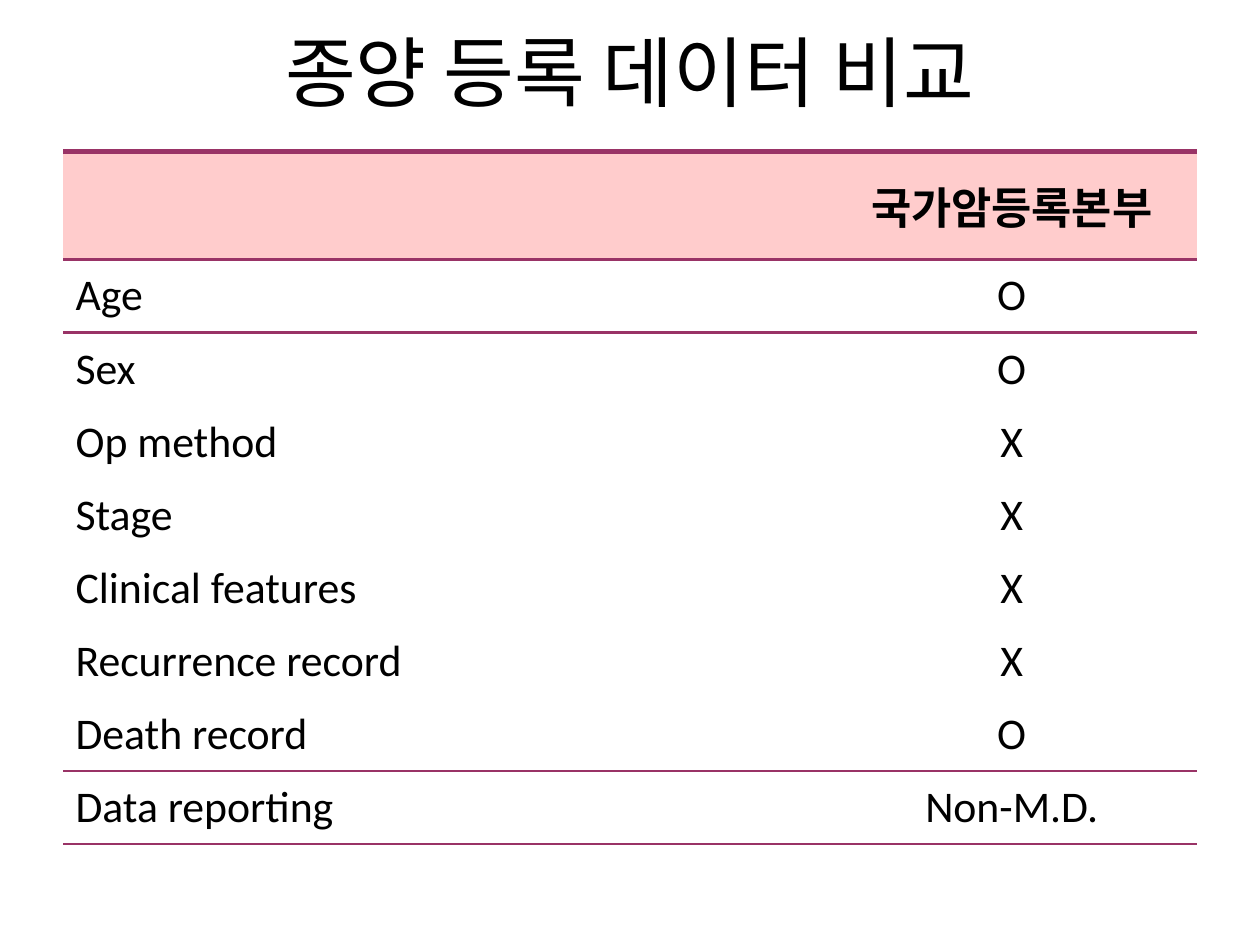
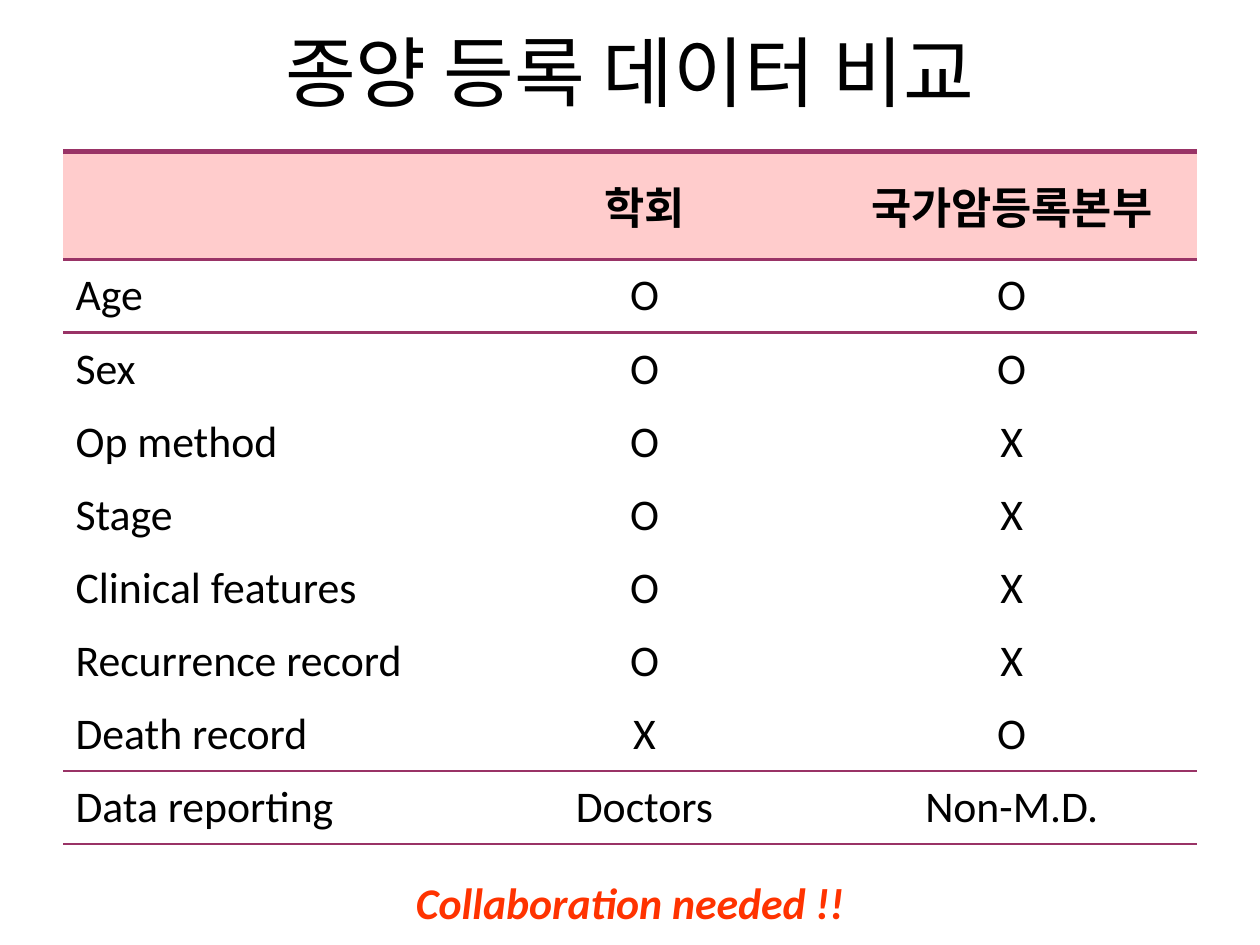
from typing import NamedTuple

from lxml import etree
from pptx import Presentation
from pptx import util as u
from pptx.dml.color import RGBColor
from pptx.enum import text as t
from pptx.oxml import ns

PX = 9144  # 100 px to the inch
FONT = "Calibri"
BLACK = RGBColor(0x00, 0x00, 0x00)
PINK = RGBColor(0xFF, 0xCC, 0xCC)
PLUM = RGBColor(0x99, 0x33, 0x66)
RED = RGBColor(0xFF, 0x33, 0x00)

TITLE = "종양 등록 데이터 비교"
NOTE = "Collaboration needed !!"
PLAIN_TABLE = "{2D5ABB26-0587-4C30-8999-92F81FD0307C}"
COLS = (317, 289, 294)
HEAD_ROW, BODY_ROW = 86, 58


class Box(NamedTuple):
    left: int
    top: int
    width: int
    height: int

    def emu(self) -> list[int]:
        return [side * PX for side in self]


class Style(NamedTuple):
    size: int = 25
    color: RGBColor = BLACK
    bold: bool = False
    italic: bool = False


class Row(NamedTuple):
    label: str
    group: str
    centre: str


TITLE_BOX = Box(50, 13, 900, 87)
TABLE_BOX = Box(50, 120, 900, 550)
NOTE_BOX = Box(51, 690, 898, 52)

BODY = Style()
HEAD = Style(bold=True)
ROWS = (
    Row("", "학회", "국가암등록본부"),
    Row("Age", "O", "O"),
    Row("Sex", "O", "O"),
    Row("Op method", "O", "X"),
    Row("Stage", "O", "X"),
    Row("Clinical features", "O", "X"),
    Row("Recurrence record", "O", "X"),
    Row("Death record", "X", "O"),
    Row("Data reporting", "Doctors", "Non-M.D."),
)
LAST = len(ROWS) - 1
# Line widths in points, one for each row edge from the top down
RULES = {0: 3, 1: 1.5, LAST: 1, LAST + 1: 1}


def write(frame, words: str, style: Style, align, before: int = 0) -> None:
    """Fill the first paragraph; before is its leading space in percent."""
    para = frame.paragraphs[0]
    para.alignment = align
    if before:
        space = etree.SubElement(para._p.get_or_add_pPr(), ns.qn("a:spcBef"))
        etree.SubElement(space, ns.qn("a:spcPct"), val=str(before * 1000))
    run = para.add_run()
    run.text = words
    font = run.font
    font.name, font.size = FONT, u.Pt(style.size)
    font.bold, font.italic = style.bold, style.italic
    font.color.rgb = style.color


def rule(cell, tag: str, points: float) -> None:
    """Draw one cell border; tag is a:lnT or a:lnB."""
    line = etree.SubElement(cell._tc.get_or_add_tcPr(), ns.qn(tag),
                            w=str(u.Pt(points)))
    fill = etree.SubElement(line, ns.qn("a:solidFill"))
    etree.SubElement(fill, ns.qn("a:srgbClr"), val=str(PLUM))


def add_title(slide) -> None:
    title = slide.shapes.title
    title.left, title.top, title.width, title.height = TITLE_BOX.emu()
    frame = title.text_frame
    frame.auto_size = t.MSO_AUTO_SIZE.NONE
    frame.vertical_anchor = t.MSO_ANCHOR.MIDDLE
    write(frame, TITLE, Style(44), t.PP_ALIGN.CENTER)


def add_grid(slide, rows: list[Row]) -> None:
    table = slide.shapes.add_table(len(rows), len(COLS), *TABLE_BOX.emu()).table
    table.first_row = table.horz_banding = False
    table._tbl.tblPr.find(ns.qn("a:tableStyleId")).text = PLAIN_TABLE
    for col, width in zip(table.columns, COLS):
        col.width = width * PX
    for i, row in enumerate(rows):
        table.rows[i].height = (BODY_ROW if i else HEAD_ROW) * PX
        for j, words in enumerate(row):
            cell = table.cell(i, j)
            for tag, edge in (("a:lnT", i), ("a:lnB", i + 1)):
                if edge in RULES:
                    rule(cell, tag, RULES[edge])
            if i:
                cell.fill.background()
            else:
                cell.fill.solid()
                cell.fill.fore_color.rgb = PINK
            cell.vertical_anchor = t.MSO_ANCHOR.MIDDLE
            if words:
                align = t.PP_ALIGN.CENTER if j else t.PP_ALIGN.LEFT
                write(cell.text_frame, words, BODY if i else HEAD, align, 20)


def add_note(slide) -> None:
    frame = slide.shapes.add_textbox(*NOTE_BOX.emu()).text_frame
    frame.word_wrap = True
    frame.auto_size = t.MSO_AUTO_SIZE.SHAPE_TO_FIT_TEXT
    write(frame, NOTE, Style(color=RED, bold=True, italic=True),
          t.PP_ALIGN.CENTER, 50)


def main() -> None:
    deck = Presentation()
    deck.slide_width, deck.slide_height = 1000 * PX, 750 * PX
    centre_only = [row._replace(group="") for row in ROWS]
    for rows in (centre_only, list(ROWS)):
        slide = deck.slides.add_slide(deck.slide_layouts[5])
        add_title(slide)
        add_grid(slide, rows)
    add_note(slide)
    deck.save("out.pptx")


if __name__ == "__main__":
    main()
